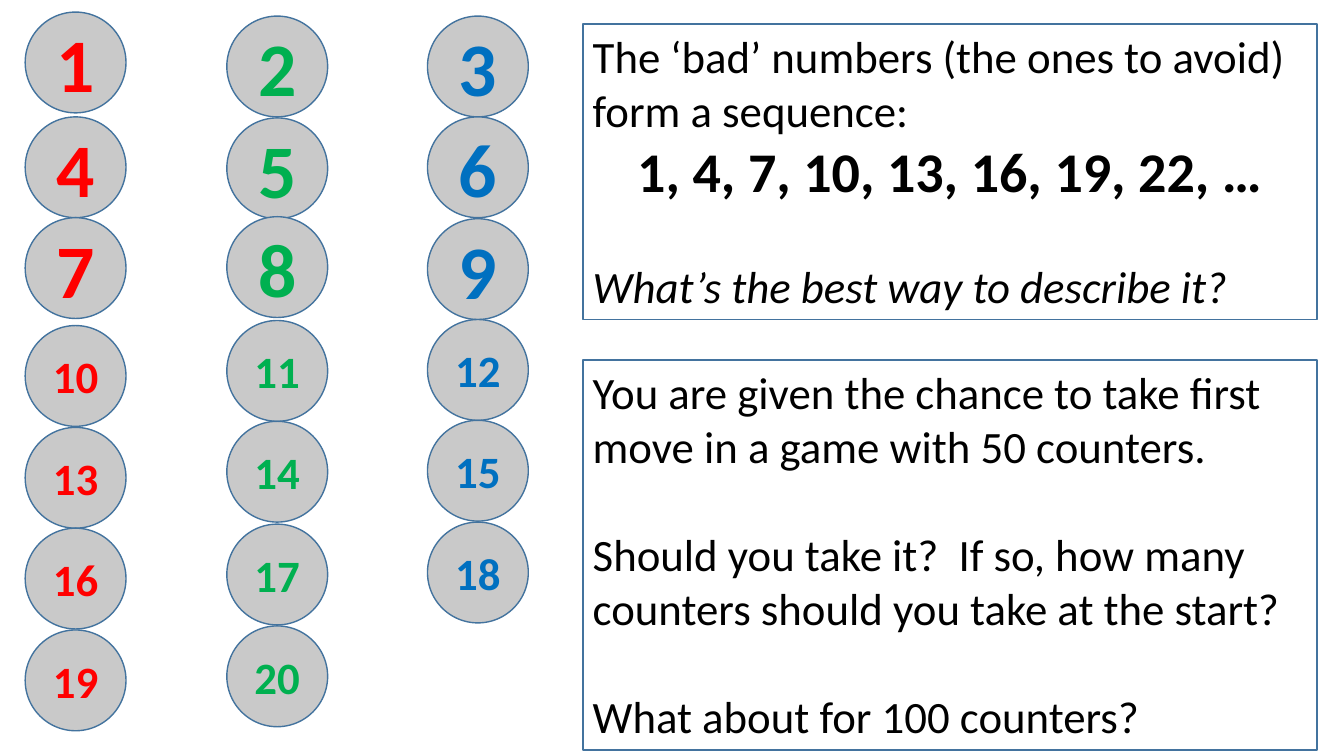
"""Build a slide of numbered counters in three columns beside two question boxes."""
from pptx import Presentation
from pptx.dml.color import RGBColor
from pptx.enum import shapes, text
from pptx.util import Inches, Pt

COLORS = {
    "red": "FF0000", "green": "00B050", "blue": "0070C0",
    "black": "000000", "counter": "C9C9C9", "outline": "43739E",
}


def rgb(name):
    return RGBColor.from_string(COLORS[name])


def write(p, content, size=32, color="black", bold=False, italic=False,
          align=text.PP_ALIGN.LEFT, before=0):
    p.alignment = align
    p.space_before = Pt(before)
    r = p.add_run()
    r.text = content
    r.font.name = "Calibri"
    r.font.size = Pt(size)
    r.font.bold = bold
    r.font.italic = italic
    r.font.color.rgb = rgb(color)


prs = Presentation()
prs.slide_width = Inches(13.33)
prs.slide_height = Inches(7.5)
s = prs.slides.add_slide(prs.slide_layouts[6])

columns = [
    ("red", 0.25, [0.12, 1.16, 2.16, 3.23, 4.24, 5.24, 6.25]),
    ("green", 2.25, [0.16, 1.17, 2.15, 3.18, 4.18, 5.2, 6.21]),
    ("blue", 4.24, [0.16, 1.16, 2.17, 3.17, 4.17, 5.18]),
]
for col, (color, left, tops) in enumerate(columns, start=1):
    for row, top in enumerate(tops):
        number = 3 * row + col
        sp = s.shapes.add_shape(shapes.MSO_SHAPE.OVAL, Inches(left), Inches(top),
                                Inches(1), Inches(1))
        sp.shadow.inherit = False
        sp.fill.solid()
        sp.fill.fore_color.rgb = rgb("counter")
        sp.line.color.rgb = rgb("outline")
        sp.line.width = Pt(1)
        tf = sp.text_frame
        tf.vertical_anchor = text.MSO_ANCHOR.MIDDLE
        write(tf.paragraphs[0], str(number), size=54 if number < 10 else 32,
              color=color, bold=True, align=text.PP_ALIGN.CENTER)

line_gap = 39
boxes = [
    (0.24, 2.93, [
        ("The ‘bad’ numbers (the ones to avoid) form a sequence:", {}),
        ("1, 4, 7, 10, 13, 16, 19, 22, …",
         {"size": 40, "bold": True, "align": text.PP_ALIGN.CENTER}),
        ("What’s the best way to describe it?", {"italic": True, "before": line_gap}),
    ]),
    (3.57, 3.87, [
        ("You are given the chance to take first move in a game with 50 counters.", {}),
        ("Should you take it?  If so, how many counters should you take at the start?",
         {"before": line_gap}),
        ("What about for 100 counters?", {"before": line_gap}),
    ]),
]
for top, height, paragraphs in boxes:
    sp = s.shapes.add_textbox(Inches(5.78), Inches(top), Inches(7.28), Inches(height))
    sp.line.color.rgb = rgb("outline")
    sp.line.width = Pt(1.25)
    tf = sp.text_frame
    tf.word_wrap = True
    for i, (content, style) in enumerate(paragraphs):
        p = tf.add_paragraph() if i else tf.paragraphs[0]
        write(p, content, **style)

prs.save("out.pptx")
